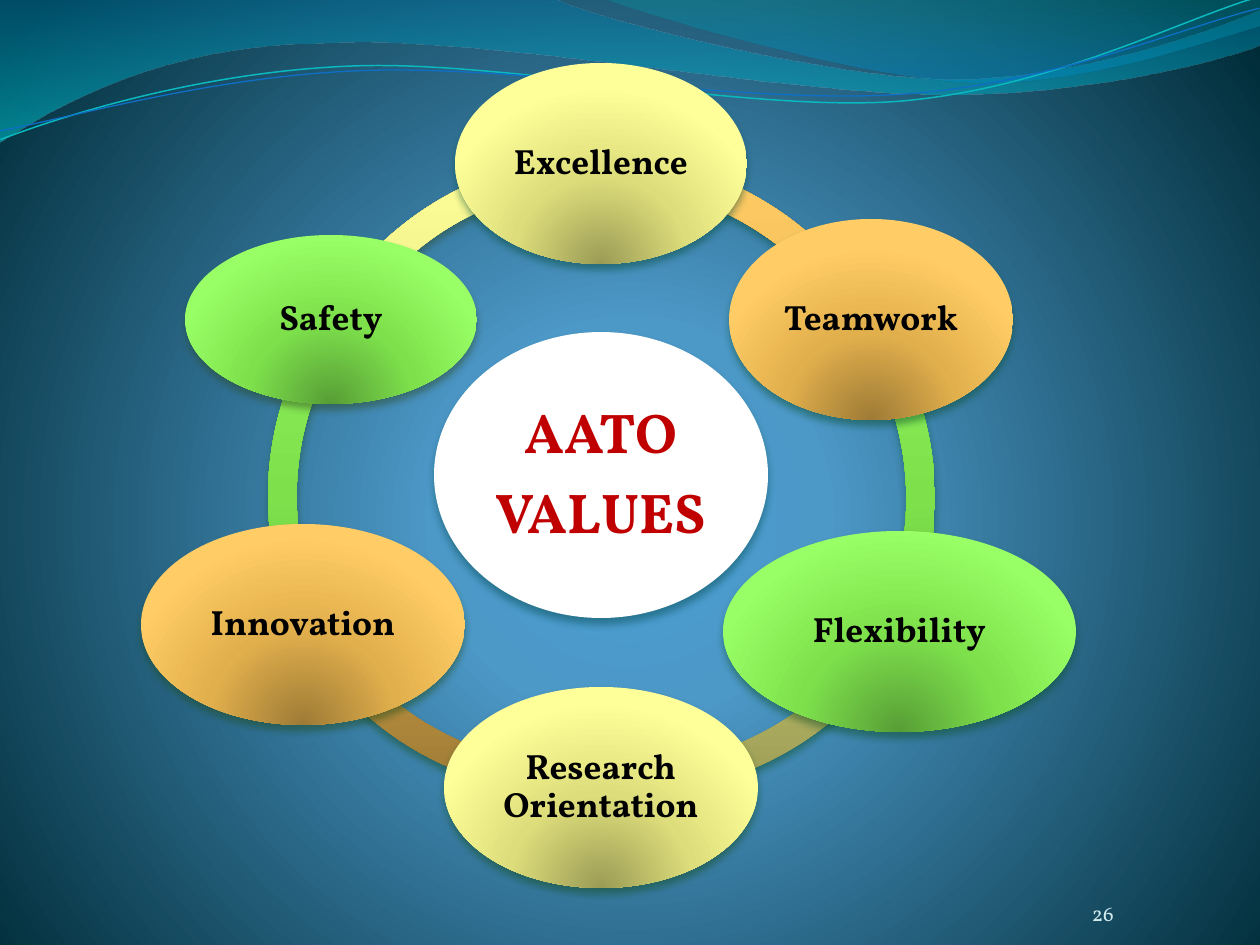
"""Build the AATO values slide: a ring of six values around a centre."""
import pptx
import pptx.util
import pptx.oxml
import pptx.oxml.ns
import pptx.dml.color
import pptx.enum.shapes
import pptx.enum.text
import lxml.etree

PX = 914400 / 126
KIND = pptx.enum.shapes.MSO_SHAPE
NS = pptx.oxml.ns.nsdecls("a")
QN = pptx.oxml.ns.qn
HUE = {"white": "FFFFFF", "black": "000000", "red": "C00000", "page": "D1EAEE",
       "cyan": "0AB8BF", "blue": "0F6FC6"}
RAMP = {"yellow": ["9C9C56", "DDDD7B", "FFFF99"],
        "green": ["589E36", "7EE14C", "99FF66"],
        "orange": ["9E7B36", "E1AF4C", "FFCC66"]}
LINEAR = '<a:lin ang="{}" scaled="0"/>'
ROUND = '<a:path path="circle"><a:fillToRect l="{}" t="{}" r="{}" b="{}"/></a:path>'
RISE = LINEAR.format(16200000)
FALL = LINEAR.format(5400000)
GLOW = ROUND.format(50000, 100000, 50000, 0)


def shade(fill, host, stops, way):
    """Fill the host element with a gradient of (place, colour, alpha) stops."""
    fill.solid()
    marks = "".join(
        f'<a:gs pos="{at * 1000}"><a:srgbClr val="{tone}"><a:alpha val="{alpha * 1000}"/>'
        f'</a:srgbClr></a:gs>' for at, tone, alpha in stops)
    grad = pptx.oxml.parse_xml(
        f'<a:gradFill {NS} rotWithShape="1"><a:gsLst>{marks}</a:gsLst>{way}</a:gradFill>')
    host.replace(host.find(QN("a:solidFill")), grad)


def place(kind, left, top, wide, high, dark):
    """Add a borderless shape with a soft shadow below it."""
    shape = slide.shapes.add_shape(kind, *[round(n * PX) for n in (left, top, wide, high)])
    shape.line.fill.background()
    shape.shadow.inherit = False
    cast = pptx.oxml.parse_xml(
        f'<a:outerShdw {NS} blurRad="57150" dist="38100" dir="5400000" rotWithShape="0">'
        f'<a:srgbClr val="{dark}"><a:alpha val="48000"/></a:srgbClr></a:outerShdw>')
    shape.element.spPr.find(QN("a:effectLst")).append(cast)
    return shape


deck = pptx.Presentation()
deck.slide_width = pptx.util.Inches(10)
deck.slide_height = pptx.util.Inches(7.5)
slide = deck.slides.add_slide(deck.slide_layouts[6])

back = slide.background.fill
back.solid()
host = slide.element.find(".//" + QN("p:bgPr"))
shade(back, host, [(0, "4AA0D6", 100), (25, "4C98C7", 100), (100, "002C38", 100)],
      ROUND.format(10000, 110000, 10000, 100000))

WAVES = [
    ([(0, -1), (554, -1), (600, 21, 837, 79, 955, 79), (1075, 79, 1207, 33, 1260, 11),
      (1261, 45), (1239, 55, 1096, 96, 940, 94), (784, 94, 481, 35, 324, 43),
      (163, 44, 58, 105, -1, 142)], [(0, "0074A1", 45), (100, "00C6CF", 55)], None, 0),
    ([(604, -1), (641, 14, 859, 78, 969, 82), (1079, 87, 1211, 40, 1260, 26),
      (1260, 0)], [(0, "00A1A9", 30), (80, "008BBF", 45)], None, 0),
    ([(-2, 110), (58, 90, 199, 52, 350, 53), (499, 53, 745, 118, 896, 114),
      (1049, 109, 1184, 45, 1260, 27)], None, "cyan", 0.85),
    ([(-2, 101), (57, 94, 207, 57, 357, 58), (509, 58, 750, 111, 902, 107),
      (1052, 104, 1188, 52, 1262, 38)], None, "blue", 0.75),
]
for parts, stops, tone, width in WAVES:
    dots = [(round(part[n] * PX), round(part[n + 1] * PX))
            for part in parts for n in range(0, len(part), 2)]
    pen = slide.shapes.build_freeform(*dots[0])
    pen.add_line_segments(dots[1:], close=stops is not None)
    wave = pen.convert_to_shape()
    legs = iter(wave.element.findall(".//" + QN("a:lnTo")))
    for part in parts[1:]:
        leg = next(legs)
        if len(part) == 6:
            leg.addprevious(curve := pptx.oxml.parse_xml(f"<a:cubicBezTo {NS}/>"))
            for bend in (leg, next(legs), next(legs)):
                curve.append(bend[0])
                bend.getparent().remove(bend)
    wave.shadow.inherit = False
    if stops:
        shade(wave.fill, wave.element.spPr, stops, FALL)
        wave.line.fill.background()
    else:
        wave.rotation = 357.3
        wave.fill.background()
        wave.line.color.rgb = pptx.dml.color.RGBColor.from_string(HUE[tone])
        wave.line.width = pptx.util.Pt(width)

RING = 637
ARCS = [
    (282, 156, 126, 162, "yellow", "2B4821"),
    (268, 178, 93.48, 128.83, "green", "1D4A1A"),
    (258, 157, 51.35, 90.93, "orange", "134C1B"),
    (310, 157, 17.85, 57.03, "yellow", "0B4E22"),
    (298, 180, 194.83, 14.99, "green", "074C2C"),
    (282, 156, 162, 198, "orange", "044A37"),
]
for left, top, start, end, name, dark in ARCS:
    arc = place(KIND.BLOCK_ARC, left, top, RING, RING, dark)
    for n, value in enumerate((start, end, 0.045)):
        arc.adjustments[n] = value
    shade(arc.fill, arc.element.spPr, list(zip((0, 50, 100), RAMP[name], (100,) * 3)), RISE)

VALUES = [
    ("AATO\nVALUES", 434, 332, 334, 286, None, "024B4E"),
    ("Excellence", 455, 63, 292, 201, "yellow", "044A37"),
    ("Teamwork", 729, 219, 284, 201, "orange", "074C2C"),
    ("Flexibility", 723, 531, 353, 201, "green", "0B4E22"),
    ("Research Orientation", 444, 687, 314, 201, "yellow", "134C1B"),
    ("Innovation", 141, 524, 324, 201, "orange", "1D4A1A"),
    ("Safety", 185, 235, 292, 169, "green", "2B4821"),
]
for text, left, top, wide, high, name, dark in VALUES:
    oval = place(KIND.OVAL, left, top, wide, high, dark)
    if name:
        shade(oval.fill, oval.element.spPr,
              list(zip((0, 50, 100), RAMP[name], (100,) * 3)), GLOW)
    else:
        oval.fill.solid()
        oval.fill.fore_color.rgb = pptx.dml.color.RGBColor.from_string(HUE["white"])
    size, tone = (20, "black") if name else (32, "red")
    frame = oval.text_frame
    frame.text = text
    frame.word_wrap = True
    frame.vertical_anchor = pptx.enum.text.MSO_ANCHOR.MIDDLE
    frame.margin_left = frame.margin_right = round(4 * PX)
    frame.margin_top = frame.margin_bottom = round(4 * PX)
    for para in frame.paragraphs:
        para.alignment = pptx.enum.text.PP_ALIGN.CENTER
        para.line_spacing = 0.9
        para.space_after = pptx.util.Pt(round(size * 0.35))
        font = para.runs[0].font
        font.name = "Vollkorn"
        font.size = pptx.util.Pt(size)
        font.bold = True
        font.color.rgb = pptx.dml.color.RGBColor.from_string(HUE[tone])

page = slide.shapes.add_textbox(*[round(n * PX) for n in (1092, 876, 105, 50)])
frame = page.text_frame
frame.text = "26"
frame.word_wrap = True
frame.vertical_anchor = pptx.enum.text.MSO_ANCHOR.BOTTOM
frame.margin_left = frame.margin_right = frame.margin_top = frame.margin_bottom = 0
font = frame.paragraphs[0].runs[0].font
font.name = "Vollkorn"
font.size = pptx.util.Pt(12)
font.color.rgb = pptx.dml.color.RGBColor.from_string(HUE["page"])

deck.save("out.pptx")
